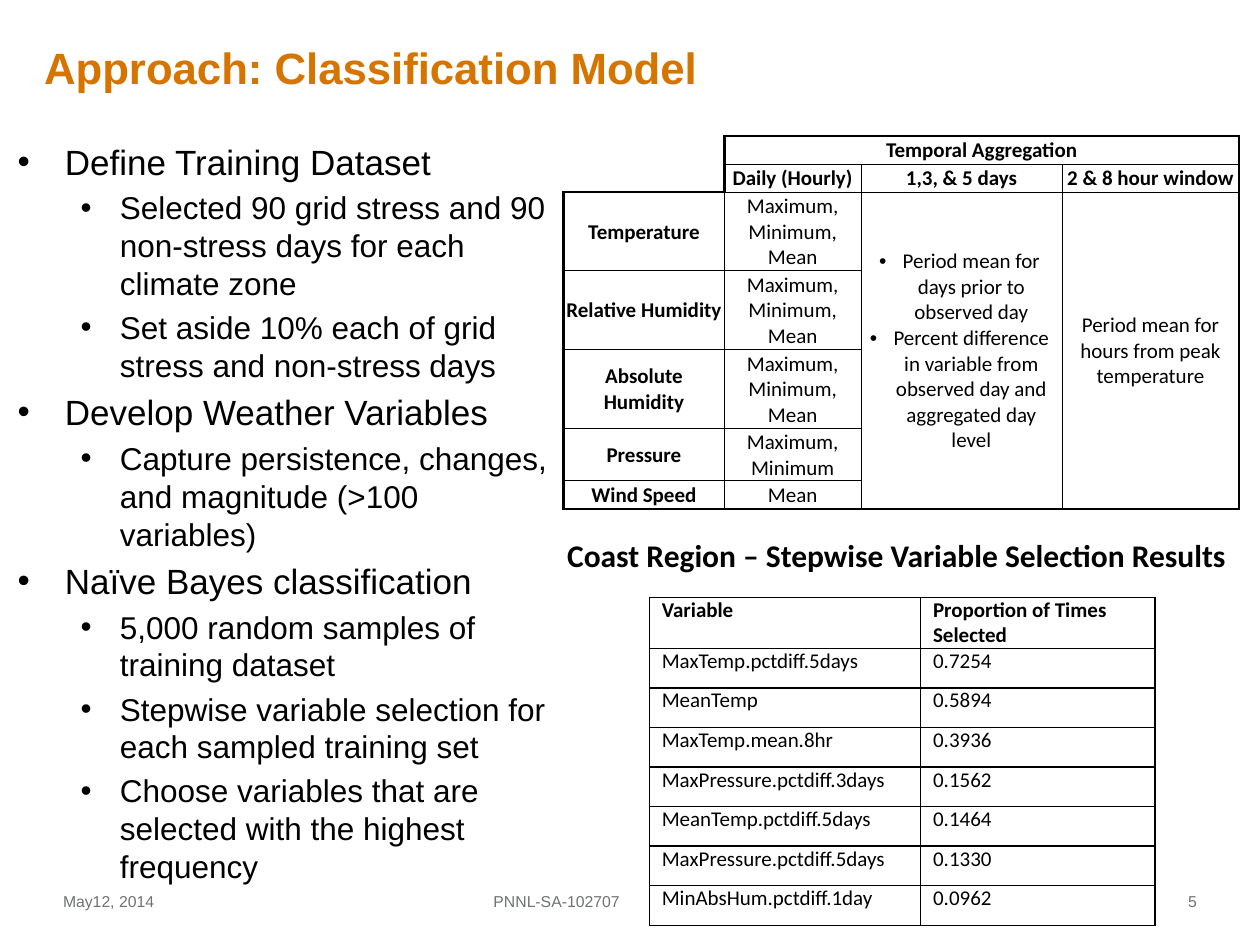
from pptx import Presentation
from pptx import util as u
from pptx.dml import color
from pptx.enum import text
from pptx.oxml import ns
from lxml import etree

Pt = u.Pt
ORANGE = color.RGBColor(0xD5, 0x75, 0x00)
GRAY = color.RGBColor(0x70, 0x72, 0x76)
BLACK = color.RGBColor(0, 0, 0)

TITLE = {"name": "Arial", "size": Pt(25), "bold": True}
TOPIC = {"name": "Arial", "size": Pt(20)}
DETAIL = {"name": "Arial", "size": Pt(18)}
FOOTER = {"name": "Arial", "size": Pt(9)}
HEADING = {"name": "Calibri", "size": Pt(18), "bold": True}
LABEL = {"name": "Calibri", "size": Pt(12), "bold": True}
VALUE = {"name": "Calibri", "size": Pt(12), "bold": False}

LEFT, CENTER, RIGHT = text.PP_ALIGN.LEFT, text.PP_ALIGN.CENTER, text.PP_ALIGN.RIGHT
TOP, MIDDLE = text.MSO_ANCHOR.TOP, text.MSO_ANCHOR.MIDDLE

APPROACH = [
    ("Define Training Dataset", [
        "Selected 90 grid stress and 90 non-stress days for each climate zone",
        "Set aside 10% each of grid stress and non-stress days"]),
    ("Develop Weather Variables", [
        "Capture persistence, changes, and magnitude (>100 variables)"]),
    ("Naïve Bayes classification", [
        "5,000 random samples of training dataset",
        "Stepwise variable selection for each sampled training set",
        "Choose variables that are selected with the highest frequency"]),
]
AGGREGATIONS = ["Daily (Hourly)", "1,3, & 5 days", "2 & 8 hour window"]
MEASURES = [
    ("Temperature", "Maximum, Minimum, Mean"),
    ("Relative Humidity", "Maximum, Minimum, Mean"),
    ("Absolute Humidity", "Maximum, Minimum, Mean"),
    ("Pressure", "Maximum, Minimum"),
    ("Wind Speed", "Mean"),
]
DAY_NOTES = ["Period mean for days prior to observed day",
             "Percent difference in variable from observed day and aggregated day level"]
HOUR_NOTE = "Period mean for hours from peak temperature"
SELECTION = [
    ("Variable", "Proportion of Times Selected"),
    ("MaxTemp.pctdiff.5days", "0.7254"),
    ("MeanTemp", "0.5894"),
    ("MaxTemp.mean.8hr", "0.3936"),
    ("MaxPressure.pctdiff.3days", "0.1562"),
    ("MeanTemp.pctdiff.5days", "0.1464"),
    ("MaxPressure.pctdiff.5days", "0.1330"),
    ("MinAbsHum.pctdiff.1day", "0.0962"),
]


def points(*lengths):
    return [Pt(length) for length in lengths]


def write(paragraph, words, style, rgb=BLACK, align=LEFT):
    paragraph.alignment = align
    run = paragraph.add_run()
    run.text = words
    for name, value in style.items():
        setattr(run.font, name, value)
    run.font.color.rgb = rgb


def add_bullet(paragraph, margin, hanging):
    properties = paragraph._p.get_or_add_pPr()
    properties.set("marL", str(Pt(margin)))
    properties.set("indent", str(-Pt(hanging)))
    etree.SubElement(properties, ns.qn("a:buFont")).set("typeface", "Arial")
    etree.SubElement(properties, ns.qn("a:buChar")).set("char", "•")


def set_frame(frame, insets=(0, 0, 0, 0), anchor=TOP):
    left, top, right, bottom = points(*insets)
    settings = {"margin_left": left, "margin_top": top, "margin_right": right,
                "margin_bottom": bottom, "vertical_anchor": anchor,
                "word_wrap": True, "auto_size": text.MSO_AUTO_SIZE.NONE}
    for name, value in settings.items():
        setattr(frame, name, value)


def place(shape, box):
    shape.left, shape.top, shape.width, shape.height = points(*box)


def add_title(slide, box):
    shape = slide.shapes.title
    place(shape, box)
    set_frame(shape.text_frame)
    write(shape.text_frame.paragraphs[0], "Approach: Classification Model", TITLE, ORANGE)


def add_approach(slide, box):
    shape = slide.placeholders[1]
    place(shape, box)
    frame = shape.text_frame
    set_frame(frame)
    lines = []
    for topic, details in APPROACH:
        lines.append((0, topic))
        lines += [(1, detail) for detail in details]
    levels = [(TOPIC, 27, 27, 4), (DETAIL, 58.5, 22.5, 3.6)]
    for index, (level, words) in enumerate(lines):
        style, margin, hanging, gap = levels[level]
        paragraph = frame.add_paragraph() if index else frame.paragraphs[0]
        paragraph.level = level
        paragraph.space_before = Pt(gap if index else 0)
        add_bullet(paragraph, margin, hanging)
        write(paragraph, words, style)


def add_text(slide, box, words, style, rgb=BLACK, align=LEFT, insets=(0, 0, 0, 0), anchor=MIDDLE):
    shape = slide.shapes.add_textbox(*points(*box))
    set_frame(shape.text_frame, insets, anchor)
    write(shape.text_frame.paragraphs[0], words, style, rgb, align)


def add_table(slide, left, top, widths, heights):
    table = slide.shapes.add_table(len(heights), len(widths),
                                   *points(left, top, sum(widths), sum(heights))).table
    table.first_row = table.horz_banding = False
    for column, width in zip(table.columns, widths):
        column.width = Pt(width)
    for row, height in zip(table.rows, heights):
        row.height = Pt(height)
    return table


def format_cell(cell, borders, insets, anchor=TOP):
    """Borders are widths for left, right, top and bottom; 0 draws none."""
    properties = cell._tc.get_or_add_tcPr()
    for side, width in zip("LRTB", borders):
        line = etree.SubElement(properties, ns.qn(f"a:ln{side}"), w=str(Pt(width)))
        if width:
            fill = etree.SubElement(line, ns.qn("a:solidFill"))
            etree.SubElement(fill, ns.qn("a:srgbClr"), val=str(BLACK))
        else:
            etree.SubElement(line, ns.qn("a:noFill"))
    cell.fill.background()
    cell.margin_left, cell.margin_top, cell.margin_right, cell.margin_bottom = points(*insets)
    cell.vertical_anchor = anchor


def add_aggregation_table(slide, left, top):
    table = add_table(slide, left, top, [92, 78, 115, 101], [16, 16, 45, 45, 45, 30, 16])
    table.cell(0, 1).merge(table.cell(0, 3))
    for column in (2, 3):
        table.cell(2, column).merge(table.cell(6, column))

    # Thick outline around the grid, thin lines inside, open top-left corner
    thick, thin = 1.5, 0.5
    for row in range(7):
        for column in range(4):
            cell = table.cell(row, column)
            if row < 2 and column == 0:
                borders = (0, thick, 0, thick if row else 0)
                etree.SubElement(cell.text_frame.paragraphs[0]._p, ns.qn("a:endParaRPr"), sz="1200")
            else:
                borders = [thick if outer else thin for outer in (
                    column == 0 or (row < 2 and column == 1),
                    column + cell.span_width == 4,
                    row == 0 or (row == 2 and column == 0),
                    row + cell.span_height == 7)]
            format_cell(cell, borders, (0.72, 0.72, 0.72, 0), MIDDLE)

    # Headers, measures and merged notes
    entries = [(0, 1, "Temporal Aggregation", LABEL), (2, 3, HOUR_NOTE, VALUE)]
    entries += [(1, column, words, LABEL) for column, words in enumerate(AGGREGATIONS, 1)]
    for row, (measure, statistics) in enumerate(MEASURES, 2):
        entries += [(row, 0, measure, LABEL), (row, 1, statistics, VALUE)]
    for row, column, words, style in entries:
        write(table.cell(row, column).text_frame.paragraphs[0], words, style, align=CENTER)
    notes_cell = table.cell(2, 2)
    notes_cell.margin_right = Pt(3)
    frame = notes_cell.text_frame
    for index, note in enumerate(DAY_NOTES):
        paragraph = frame.add_paragraph() if index else frame.paragraphs[0]
        add_bullet(paragraph, 13.5, 13.5)
        write(paragraph, note, VALUE, align=CENTER)


def add_selection_table(slide, left, top):
    table = add_table(slide, left, top, [155, 134], [29] + [22.6] * 7)
    for row, entries in enumerate(SELECTION):
        for column, words in enumerate(entries):
            cell = table.cell(row, column)
            format_cell(cell, [1] * 4, (7.2, 0, 7.2, 0))
            write(cell.text_frame.paragraphs[0], words, VALUE if row else LABEL)


def add_footer(slide, left, top, height):
    parts = [("May12, 2014", 0, 168, LEFT), ("PNNL-SA-102707", 168, 228, CENTER),
             ("5", 480, 168, RIGHT)]
    for words, offset, width, align in parts:
        add_text(slide, (left + offset, top, width, height), words, FOOTER, GRAY, align)


def main():
    presentation = Presentation()
    presentation.slide_width, presentation.slide_height = points(720, 540)
    slide = presentation.slides.add_slide(presentation.slide_layouts[1])
    add_title(slide, (25.2, 23.4, 472, 30))
    add_aggregation_table(slide, 322, 77.8)
    add_selection_table(slide, 371, 341.3)
    add_text(slide, (317, 303, 396, 29), "Coast Region – Stepwise Variable Selection Results",
             HEADING, insets=(7.2, 3.6, 7.2, 3.6), anchor=TOP)
    add_approach(slide, (10, 80, 310, 435.6))
    add_footer(slide, 36, 500.4, 28.8)
    presentation.save("out.pptx")


if __name__ == "__main__":
    main()
